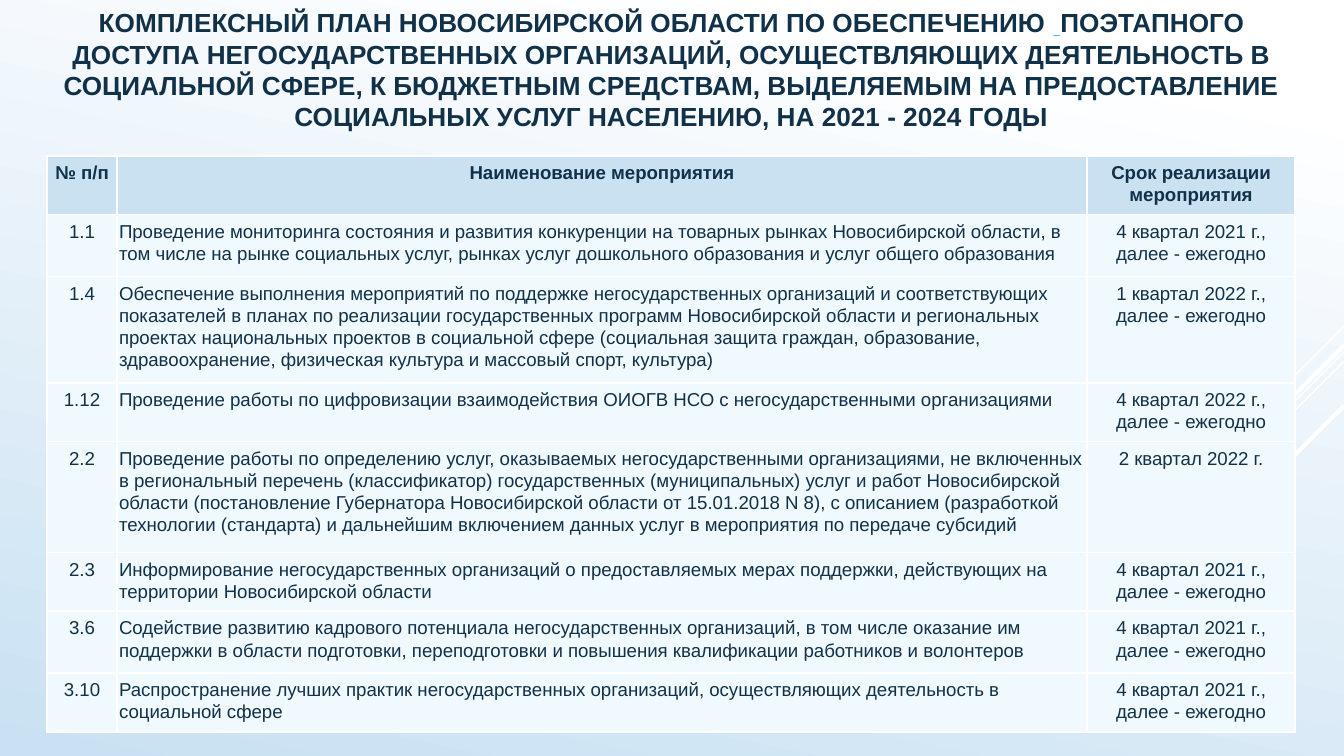
from lxml.etree import SubElement as Sub
from pptx import Presentation
from pptx.dml.color import RGBColor
from pptx.enum.shapes import MSO_CONNECTOR as Link
from pptx.enum.text import PP_ALIGN as Align
from pptx.oxml.ns import qn
from pptx.util import Cm, Pt

INK, WHITE, HEAD, BODY = "113149", "FFFFFF", "CAE1F2", "F0F9FD"
YEARLY = ", далее - ежегодно"
COLS = [1.32, 18.33, 3.94]
HIGHS = [1.1, 1.17, 2, 1.1, 2.1, 1.1, 1.17, 1.1]
RAYS = [(6.17, 1.9, 0.75), (6.65, 6.22, 0.75), (6.83, 3.96, 0.75),
        (6.53, 3.63, 2.25), (7.67, 2.64, 2.25)]
TITLE = [
    ("КОМПЛЕКСНЫЙ ПЛАН НОВОСИБИРСКОЙ ОБЛАСТИ ПО ОБЕСПЕЧЕНИЮ ", {}),
    (" ", {"tint": "3FCDE7", "under": True}),
    ("ПОЭТАПНОГО ДОСТУПА НЕГОСУДАРСТВЕННЫХ ОРГАНИЗАЦИЙ, ОСУЩЕСТВЛЯЮЩИХ "
     "ДЕЯТЕЛЬНОСТЬ В СОЦИАЛЬНОЙ СФЕРЕ, К БЮДЖЕТНЫМ СРЕДСТВАМ, ВЫДЕЛЯЕМЫМ НА "
     "ПРЕДОСТАВЛЕНИЕ СОЦИАЛЬНЫХ УСЛУГ НАСЕЛЕНИЮ, НА 2021 - 2024 ГОДЫ", {}),
]
ROWS = [
    ("№ п/п", "Наименование мероприятия", "Срок реализации мероприятия"),
    ("1.1", "Проведение мониторинга состояния и развития конкуренции на товарных "
     "рынках Новосибирской области, в том числе на рынке социальных услуг, рынках "
     "услуг дошкольного образования и услуг общего образования",
     "4 квартал 2021 г." + YEARLY),
    ("1.4", "Обеспечение выполнения мероприятий по поддержке негосударственных "
     "организаций и соответствующих показателей в планах по реализации "
     "государственных программ Новосибирской области и региональных проектах "
     "национальных проектов в социальной сфере (социальная защита граждан, "
     "образование, здравоохранение, физическая культура и массовый спорт, культура)",
     "1 квартал 2022 г." + YEARLY),
    ("1.12", "Проведение работы по цифровизации взаимодействия ОИОГВ НСО с "
     "негосударственными организациями", "4 квартал 2022 г." + YEARLY),
    ("2.2", "Проведение работы по определению услуг, оказываемых "
     "негосударственными организациями, не включенных в региональный перечень "
     "(классификатор) государственных (муниципальных) услуг и работ Новосибирской "
     "области (постановление Губернатора Новосибирской области от 15.01.2018 N 8), "
     "с описанием (разработкой технологии (стандарта) и дальнейшим включением "
     "данных услуг в мероприятия по передаче субсидий", "2 квартал 2022 г."),
    ("2.3", "Информирование негосударственных организаций о предоставляемых мерах "
     "поддержки, действующих на территории Новосибирской области",
     "4 квартал 2021 г." + YEARLY),
    ("3.6", "Содействие развитию кадрового потенциала негосударственных "
     "организаций, в том числе оказание им поддержки в области подготовки, "
     "переподготовки и повышения квалификации работников и волонтеров",
     "4 квартал 2021 г." + YEARLY),
    ("3.10", "Распространение лучших практик негосударственных организаций, "
     "осуществляющих деятельность в социальной сфере",
     "4 квартал 2021 г." + YEARLY),
]


def color(code):
    """Turn a hex string into a colour."""
    return RGBColor.from_string(code)


def write(para, text, size=10, tint=INK, bold=False, under=False,
          align=Align.CENTER, space=None):
    """Add one formatted run to a paragraph."""
    para.alignment = align
    para.line_spacing = space
    run = para.add_run()
    run.text = text
    font = run.font
    font.name, font.size, font.bold = "Arial", Pt(size), bold
    font.underline = under
    font.color.rgb = color(tint)


def paint(slide):
    """Fill the background with a gradient."""
    fill = slide.background.fill
    fill.gradient()
    fill.gradient_angle = 258
    for stop, place, code in zip(fill.gradient_stops, (0.1, 1), (WHITE, "C9E1F3")):
        stop.position = place
        stop.color.rgb = color(code)


def ray(slide, top, run, width):
    """Draw a diagonal line down from the right edge."""
    line = slide.shapes.add_connector(
        Link.STRAIGHT, Cm(25.4), Cm(top), Cm(25.4 - run), Cm(top + run))
    line.line.color.rgb = color(WHITE)
    line.line.width = Pt(width)
    Sub(line._element.spPr, qn("a:effectLst"))


def title(slide):
    """Place the heading."""
    box = slide.shapes.add_textbox(Cm(0.69), 0, Cm(24), Cm(3.18))
    box.text_frame.word_wrap = True
    for text, style in TITLE:
        write(box.text_frame.paragraphs[0], text, size=14, bold=True, **style)


def edge(cell):
    """Give a cell white borders."""
    props = cell._tc.get_or_add_tcPr()
    for side in "LRTB":
        line = Sub(props, qn("a:ln" + side), w=str(Pt(1)))
        Sub(Sub(line, qn("a:solidFill")), qn("a:srgbClr"), val=WHITE)


def style(cell, text, head, align):
    """Fill one table cell."""
    edge(cell)
    cell.fill.solid()
    cell.fill.fore_color.rgb = color(HEAD if head else BODY)
    cell.margin_left = cell.margin_right = Cm(0.04)
    cell.margin_top = cell.margin_bottom = Cm(0.1)
    write(cell.text_frame.paragraphs[0], text, bold=head, align=align, space=1.07)


def grid(slide):
    """Build the table of measures."""
    table = slide.shapes.add_table(
        len(ROWS), len(COLS), Cm(0.89), Cm(2.95), Cm(sum(COLS)), Cm(sum(HIGHS))).table
    for col, wide in zip(table.columns, COLS):
        col.width = Cm(wide)
    for r, (row, high) in enumerate(zip(ROWS, HIGHS)):
        table.rows[r].height = Cm(high)
        for c, text in enumerate(row):
            align = Align.LEFT if r and c == 1 else Align.CENTER
            style(table.cell(r, c), text, r == 0, align)


def main():
    """Build and save the slide."""
    deck = Presentation()
    deck.slide_width, deck.slide_height = Cm(25.4), Cm(14.29)
    slide = deck.slides.add_slide(deck.slide_layouts[6])
    paint(slide)
    for spot in RAYS:
        ray(slide, *spot)
    title(slide)
    grid(slide)
    deck.save("out.pptx")


if __name__ == "__main__":
    main()
